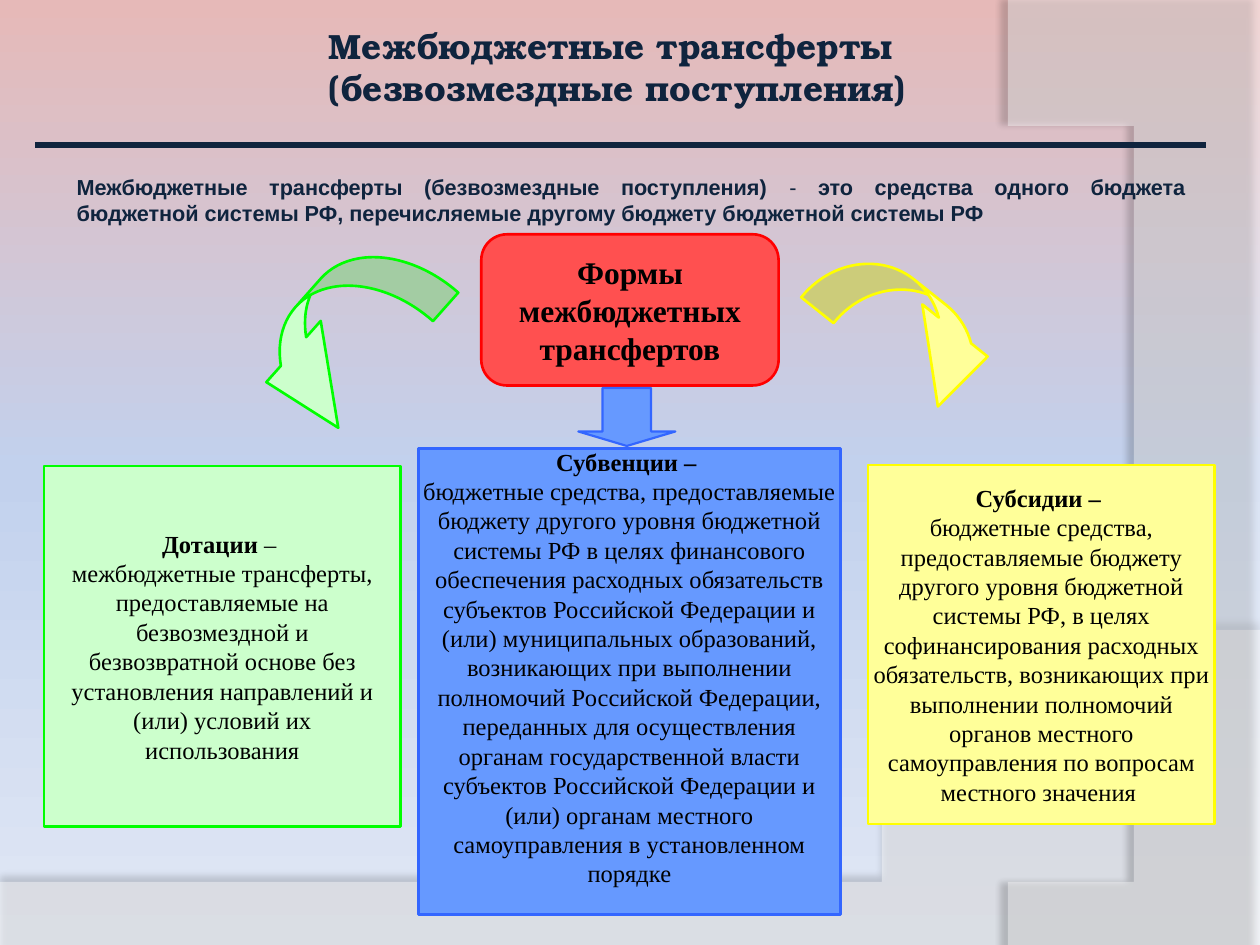
import pptx
import pptx.dml.color
import pptx.enum.shapes
import pptx.enum.text
import pptx.oxml
import pptx.oxml.ns
import pptx.util
from pptx.util import Inches

SHAPE = pptx.enum.shapes.MSO_SHAPE
ALIGN = pptx.enum.text.PP_ALIGN
ANCHOR = pptx.enum.text.MSO_ANCHOR
NAVY = "0F243E"
SERIF = "Times New Roman"

BACKGROUND = [(0, "E6B9B8"), (50, "C2D1ED"), (100, "E1E8F5")]
# Each wave: straight corners, then a Bezier edge back to the first corner
WAVES = [
    dict(corners=[(0, 7.05), (0, 7.51), (10, 7.51), (10, 5.2)],
         curve=[(10, 5.2), (5.59, 7.29), (3.91, 7.19), (0, 7.05)],
         opacity=45, shadow=(35, 4, 3.5, 270)),
    dict(corners=[(8, 0), (10, 0.02), (10, 7.5), (8.21, 7.5)],
         curve=[(8.21, 7.5), (9.35, 6.19), (10.18, 3), (8, 0)],
         opacity=40, shadow=(45, 4, 4, 180)),
]

TITLE = [[("Межбюджетные трансферты \v(безвозмездные поступления)", True)]]
DEFINITION = [[
    ("Межбюджетные трансферты (безвозмездные поступления)", True),
    (" -", False),
    (" это средства одного бюджета бюджетной системы РФ, перечисляемые "
     "другому бюджету бюджетной системы РФ", True),
]]
# fill and line
GREEN, BLUE, YELLOW = ("CCFFCC", "00FF00"), ("6699FF", "3366FF"), ("FFFF99", "FFFF00")
RED = ("FF5050", "FF0000")

# box, colours, insets, paragraphs of (text, bold) runs
FORMS = [
    ((0.35, 3.7, 2.83, 2.86), GREEN, (0.12, 0, 0.12, 0), [
        [("Дотации ", True), ("– ", False)],
        [("межбюджетные трансферты, предоставляемые на безвозмездной и "
          "безвозвратной основе без установления направлений и (или) условий "
          "их использования", False)]]),
    ((3.32, 3.56, 3.35, 3.7), BLUE, (0, 0, 0, 0.23), [
        [("Субвенции – ", True)],
        [("бюджетные средства, предоставляемые бюджету другого уровня бюджетной "
          "системы РФ в целях финансового обеспечения расходных обязательств "
          "субъектов Российской Федерации и (или) муниципальных образований, "
          "возникающих при выполнении полномочий Российской Федерации, переданных "
          "для осуществления органам государственной власти субъектов Российской "
          "Федерации и (или) органам местного самоуправления в установленном "
          "порядке", False)]]),
    ((6.89, 3.69, 2.75, 2.85), YELLOW, (0, 0, 0, 0), [
        [("Субсидии – ", True)],
        [("бюджетные средства, предоставляемые бюджету другого уровня бюджетной "
          "системы РФ, в целях софинансирования расходных обязательств, "
          "возникающих при выполнении полномочий органов местного самоуправления "
          "по вопросам местного значения ", False)]]),
]

# preset, box, colours, line width, adjustments, rotation
ARROWS = [
    (SHAPE.CURVED_UP_ARROW, (1.84, 2.24, 1.76, 0.89), GREEN, 1.5, (0.34, 0.73, 0.75), 131.6),
    (SHAPE.DOWN_ARROW, (4.59, 3.08, 0.77, 0.46), BLUE, 1.25, (0.5, 0.25), 0),
    (SHAPE.CURVED_DOWN_ARROW, (6.38, 2.3, 1.72, 0.67), YELLOW, 1.5, (0.49, 0.99, 0.83), 38.6),
]


def rgb(value):
    return pptx.dml.color.RGBColor.from_string(value)


def drawing_xml(markup):
    """Parse one DrawingML element written with the a: prefix."""
    namespace = pptx.oxml.ns.nsdecls("a")
    return pptx.oxml.parse_xml(f"<a:root {namespace}>{markup}</a:root>")[0]


def paint_background(slide):
    fill = slide.background.fill
    fill.gradient()
    fill.gradient_angle = 270
    stop_list = slide._element.find(".//" + pptx.oxml.ns.qn("a:gsLst"))
    for stop in list(stop_list):
        stop_list.remove(stop)
    for position, color in BACKGROUND:
        stop_list.append(drawing_xml(
            f'<a:gs pos="{position * 1000}"><a:srgbClr val="{color}"/></a:gs>'))


def bezier(points, steps=40):
    """Yield the points between the two ends of a cubic curve."""
    weights = (1, 3, 3, 1)
    for step in range(1, steps):
        t = step / steps
        yield tuple(sum(w * (1 - t) ** (3 - i) * t ** i * point[axis]
                        for i, (w, point) in enumerate(zip(weights, points)))
                    for axis in (0, 1))


def add_wave(slide, corners, curve, opacity, shadow):
    builder = slide.shapes.build_freeform(*corners[0], scale=Inches(1))
    builder.add_line_segments(corners[1:] + list(bezier(curve)), close=True)
    wave = builder.convert_to_shape()
    wave.fill.solid()
    wave.fill.fore_color.rgb = rgb("FFFFFF")
    wave.line.fill.background()
    properties = wave._element.spPr
    color = properties.find(pptx.oxml.ns.qn("a:solidFill"))[0]
    color.append(drawing_xml(f'<a:alpha val="{opacity * 1000}"/>'))
    alpha, blur, distance, direction = shadow
    properties.append(drawing_xml(
        f'<a:effectLst><a:outerShdw blurRad="{int(pptx.util.Pt(blur))}" '
        f'dist="{int(pptx.util.Pt(distance))}" dir="{direction * 60000}" '
        f'algn="ctr" rotWithShape="0">'
        f'<a:srgbClr val="000000"><a:alpha val="{alpha * 1000}"/></a:srgbClr>'
        '</a:outerShdw></a:effectLst>'))


def add_shape(slide, preset, box, colors, width=1.5, adjustments=(), rotation=0):
    shape = slide.shapes.add_shape(preset, *map(Inches, box))
    shape.shadow.inherit = False
    shape.fill.solid()
    shape.fill.fore_color.rgb = rgb(colors[0])
    shape.line.color.rgb = rgb(colors[1])
    shape.line.width = pptx.util.Pt(width)
    shape.rotation = rotation
    for index, value in enumerate(adjustments):
        shape.adjustments[index] = value
    return shape


def write(shape, paragraphs, size=14, font=SERIF, color="000000", align=ALIGN.CENTER,
          anchor=ANCHOR.MIDDLE, insets=(0, 0, 0, 0)):
    frame = shape.text_frame
    frame.word_wrap = True
    frame.vertical_anchor = anchor
    (frame.margin_left, frame.margin_top,
     frame.margin_right, frame.margin_bottom) = map(Inches, insets)
    for index, runs in enumerate(paragraphs):
        paragraph = frame.add_paragraph() if index else frame.paragraphs[0]
        paragraph.alignment = align
        for text, bold in runs:
            for part, line in enumerate(text.split("\v")):
                if part:
                    paragraph.add_line_break()
                run = paragraph.add_run()
                run.text = line
                run.font.size = pptx.util.Pt(size)
                run.font.name = font
                run.font.bold = bold
                run.font.color.rgb = rgb(color)


def main():
    presentation = pptx.Presentation()
    presentation.slide_width, presentation.slide_height = Inches(10), Inches(7.5)
    slide = presentation.slides.add_slide(presentation.slide_layouts[6])
    paint_background(slide)
    for wave in WAVES:
        add_wave(slide, **wave)

    title = slide.shapes.add_textbox(*map(Inches, (2.56, 0.3, 7.24, 0.46)))
    write(title, TITLE, size=20, font="TeX Gyre Bonum", color=NAVY, align=ALIGN.LEFT,
          insets=(0.05, 0, 0.05, 0))
    definition = slide.shapes.add_textbox(*map(Inches, (0.51, 1.33, 9, 0.61)))
    write(definition, DEFINITION, size=12.4, font="Arial", color=NAVY, align=ALIGN.JUSTIFY,
          anchor=ANCHOR.TOP, insets=(0.1, 0.05, 0.1, 0.05))

    rule = slide.shapes.add_connector(pptx.enum.shapes.MSO_CONNECTOR.STRAIGHT,
                                      *map(Inches, (0.28, 1.15, 9.57, 1.15)))
    rule.line.color.rgb = rgb(NAVY)
    rule.line.width = pptx.util.Pt(3.75)
    rule._element.spPr.append(drawing_xml("<a:effectLst/>"))

    heading = add_shape(slide, SHAPE.ROUNDED_RECTANGLE, (3.82, 1.86, 2.36, 1.2), RED,
                        adjustments=(0.17,))
    write(heading, [[("Формы межбюджетных трансфертов", True)]], size=18,
          insets=(0.14, 0.05, 0.14, 0.05))
    for box, colors, insets, paragraphs in FORMS:
        write(add_shape(slide, SHAPE.RECTANGLE, box, colors), paragraphs, insets=insets)
    for arrow in ARROWS:
        add_shape(slide, *arrow)
    presentation.save("out.pptx")


if __name__ == "__main__":
    main()
